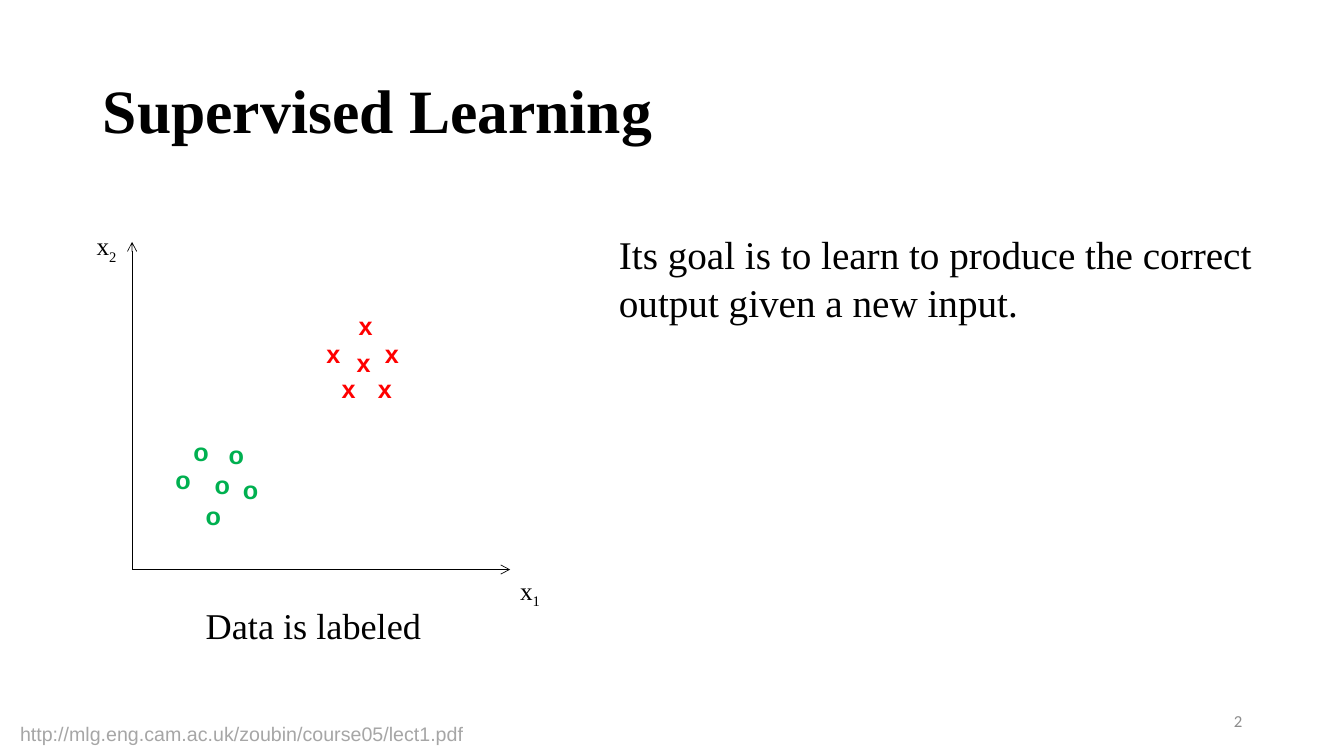
from dataclasses import dataclass

from lxml import etree
from pptx import Presentation
from pptx.dml.color import RGBColor
from pptx.enum.shapes import MSO_CONNECTOR
from pptx.enum.text import MSO_ANCHOR, MSO_AUTO_SIZE, PP_ALIGN
from pptx.oxml.ns import qn
from pptx.util import Inches, Pt

BLACK = RGBColor(0x00, 0x00, 0x00)
RED = RGBColor(0xFF, 0x00, 0x00)
GREEN = RGBColor(0x00, 0xB0, 0x50)
LIGHT_GRAY = RGBColor(0xA6, 0xA6, 0xA6)
MID_GRAY = RGBColor(0x8C, 0x8C, 0x8C)
STRAIGHT = MSO_CONNECTOR.STRAIGHT
TOP, MIDDLE = MSO_ANCHOR.TOP, MSO_ANCHOR.MIDDLE
LEFT, RIGHT = PP_ALIGN.LEFT, PP_ALIGN.RIGHT
NO_FIT = MSO_AUTO_SIZE.NONE
SERIF = "Times New Roman"


@dataclass(frozen=True)
class TextStyle:
    size: float
    color: RGBColor = BLACK
    name: str = SERIF
    bold: bool = False


@dataclass(frozen=True)
class Label:
    text: str
    place: tuple[float, float, float, float]
    style: TextStyle
    wrap: bool = False
    anchor: MSO_ANCHOR = TOP
    align: PP_ALIGN = LEFT
    subscript: str = ""


@dataclass(frozen=True)
class Cluster:
    mark: str
    color: RGBColor
    width: float
    corners: tuple[tuple[float, float], ...]


AXIS_STYLE = TextStyle(18)
ORIGIN = (1.31, 5.65)
AXIS_ENDS = ((1.31, 2.4), (5.06, 5.65))
AXIS_LABELS = (
    Label("x", (0.86, 2.24, 0.41, 0.4), AXIS_STYLE, subscript="2"),
    Label("x", (5.06, 5.66, 0.41, 0.4), AXIS_STYLE, subscript="1"),
)
CLUSTERS = (
    Cluster("x", RED, 0.34, ((3.14, 3.31), (3.72, 3.31), (3.44, 3.4),
                             (3.29, 3.65), (3.46, 3.03), (3.65, 3.65))),
    Cluster("o", GREEN, 0.36, ((2.31, 4.66), (1.64, 4.56), (1.82, 4.28),
                               (1.94, 4.91), (2.03, 4.61), (2.17, 4.31))),
)
TITLE = Label("Supervised Learning", (0.92, 0.4, 11.5, 1.45),
              TextStyle(44, bold=True), wrap=True, anchor=MIDDLE)
CAPTION = Label("Data is labeled", (1.94, 5.93, 2.36, 0.65),
                TextStyle(25.9), wrap=True)
NOTES = (
    Label("Its goal is to learn to produce the correct output given a new input.",
          (6.04, 2.24, 6.7, 4.52), TextStyle(28), wrap=True),
    Label("http://mlg.eng.cam.ac.uk/zoubin/course05/lect1.pdf",
          (0.1, 7.11, 4.62, 0.34), TextStyle(14, LIGHT_GRAY, "Arial")),
    Label("2", (9.42, 6.95, 3, 0.4), TextStyle(12, MID_GRAY, "Calibri"),
          wrap=True, anchor=MIDDLE, align=RIGHT),
)


def add_span(para, text: str, style: TextStyle):
    span = para.add_run()
    span.text = text
    formats = {"size": Pt(style.size), "name": style.name, "bold": style.bold}
    for attribute, value in formats.items():
        setattr(span.font, attribute, value)
    span.font.color.rgb = style.color
    return span


def fill_box(box, label: Label):
    """Place a text box or placeholder and write its label; return the paragraph."""
    for attribute, length in zip(("left", "top", "width", "height"), label.place):
        setattr(box, attribute, Inches(length))
    frame = box.text_frame
    formats = {"word_wrap": label.wrap, "vertical_anchor": label.anchor,
               "auto_size": NO_FIT}
    for attribute, value in formats.items():
        setattr(frame, attribute, value)
    para = frame.paragraphs[0]
    para.alignment = label.align
    para.space_before = Pt(0)
    add_span(para, label.text, label.style)
    if label.subscript:
        span = add_span(para, label.subscript, label.style)
        span.font._element.set("baseline", "-25000")
    return para


def add_label(shapes, label: Label) -> None:
    fill_box(shapes.add_textbox(0, 0, 0, 0), label)


def add_axis(shapes, end: tuple[float, float]) -> None:
    axis = shapes.add_connector(STRAIGHT, *map(Inches, ORIGIN + end))
    axis.line.color.rgb = BLACK
    axis.line.width = Pt(0.5)
    etree.SubElement(axis.line._get_or_add_ln(), qn("a:tailEnd"), type="arrow")
    etree.SubElement(axis._element.spPr, qn("a:effectLst"))


def add_plot(page) -> None:
    shapes = page.shapes.add_group_shape().shapes
    for end in AXIS_ENDS:
        add_axis(shapes, end)
    for label in AXIS_LABELS:
        add_label(shapes, label)
    for cluster in CLUSTERS:
        style = TextStyle(18, cluster.color, "Arial", bold=True)
        for left, top in cluster.corners:
            place = (left, top, cluster.width, 0.4)
            add_label(shapes, Label(cluster.mark, place, style))


def main() -> None:
    deck = Presentation()
    deck.slide_width, deck.slide_height = Inches(13.33), Inches(7.5)
    page = deck.slides.add_slide(deck.slide_layouts[1])
    title = fill_box(page.shapes.title, TITLE)
    title.line_spacing = 0.9
    caption = fill_box(page.placeholders[1], CAPTION)
    properties = caption._p.get_or_add_pPr()
    properties.set("marL", "0")
    properties.set("indent", "0")
    etree.SubElement(properties, qn("a:buNone"))
    add_plot(page)
    for note in NOTES:
        add_label(page.shapes, note)
    deck.save("out.pptx")


if __name__ == "__main__":
    main()
